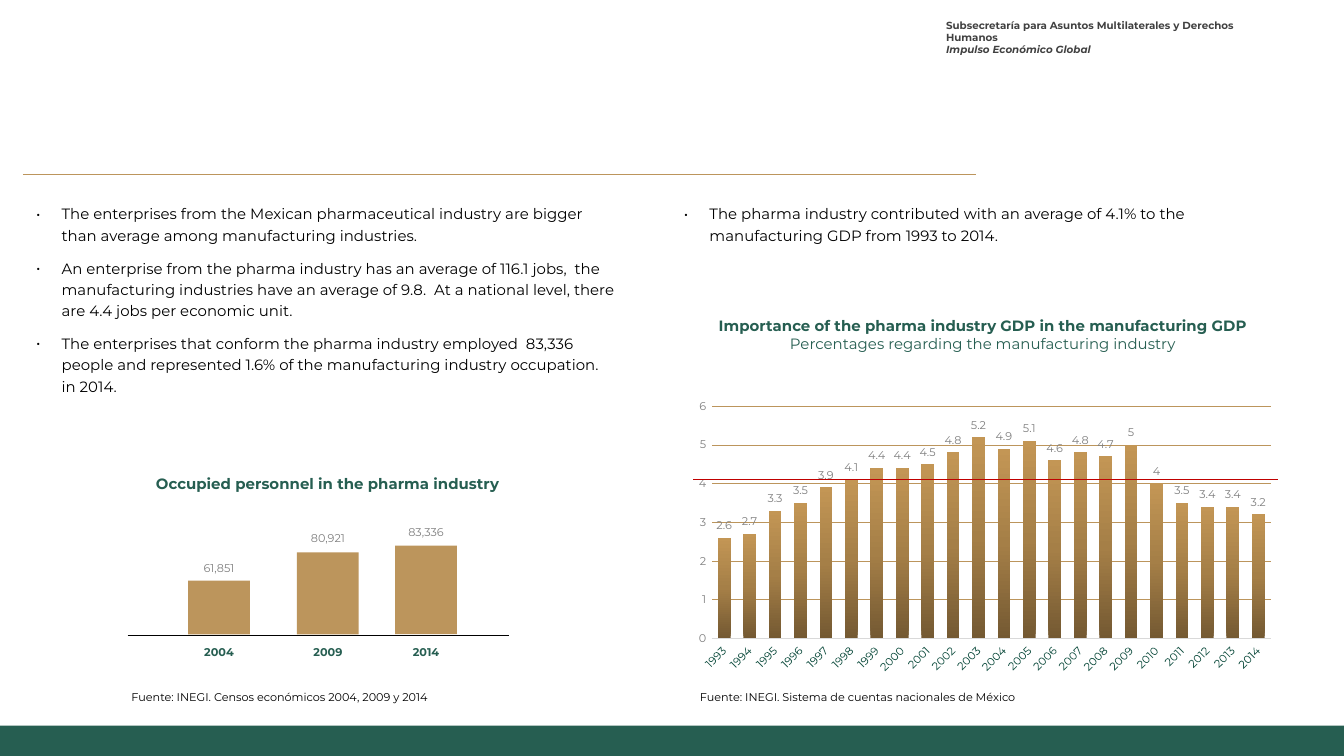
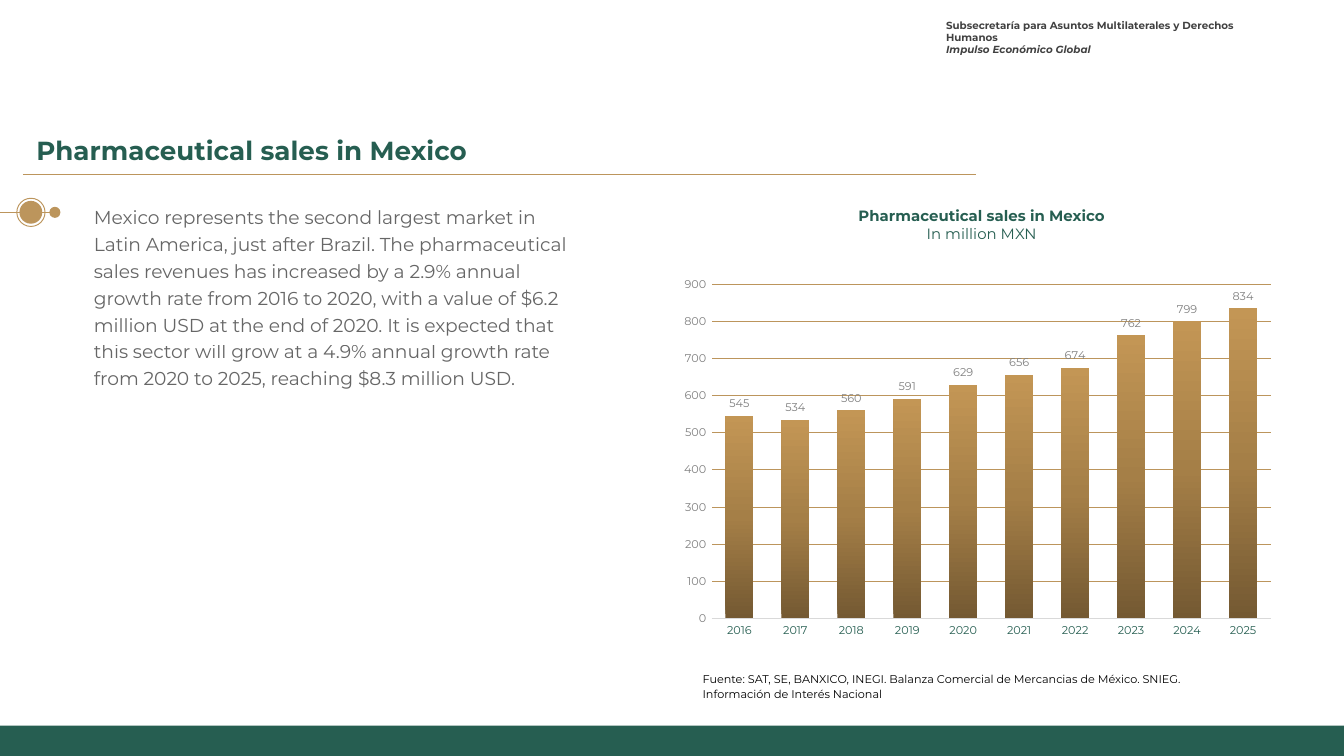
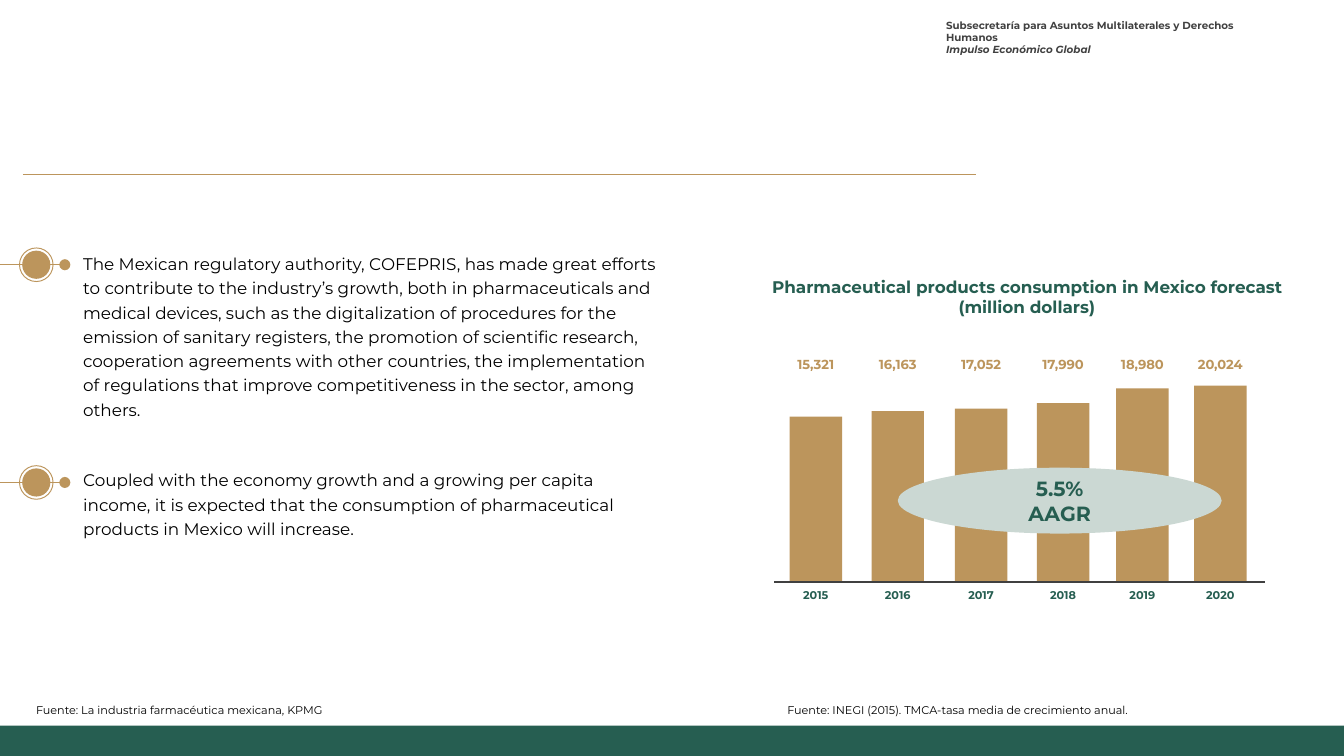
from copy import deepcopy

from lxml.etree import SubElement
from pptx import Presentation
from pptx.chart.data import CategoryChartData
from pptx.dml.color import RGBColor
from pptx.enum.chart import XL_CHART_TYPE as ChartType
from pptx.enum.chart import XL_LABEL_POSITION as LabelPosition
from pptx.enum.chart import XL_TICK_MARK as TickMark
from pptx.enum.shapes import MSO_CONNECTOR as Connector
from pptx.enum.shapes import MSO_SHAPE as Shape
from pptx.enum.text import MSO_ANCHOR as Anchor
from pptx.enum.text import MSO_AUTO_SIZE as AutoSize
from pptx.enum.text import PP_ALIGN as Align
from pptx.oxml.ns import qn
from pptx.util import Inches, Pt

COLORS = {
    "green": "265E51", "gold": "BC955C", "black": "000000", "dark": "404040",
    "gray": "808080", "axis": "D9D9D9", "red": "C00000", "pale": "CBD8D3",
    "bar_low": "745932", "bar_mid": "A57F47", "bar_high": "C39655",
}
FONT = "Montserrat"
TITLE_ONLY, BLANK = 5, 6
PAGE_WIDTH = 10
PAGE_HEIGHT = PAGE_WIDTH * 9 / 16

HEADING = {"size": 8, "color": "green", "bold": True}
YEAR = {"size": 6, "color": "green", "bold": True}
BODY = {"line_spacing": 1.2, "space_after": Pt(6)}
CENTER = {"alignment": Align.CENTER}
NOTE = {"line_spacing": 1.07, "space_after": Pt(8)}
TIGHT = {f"margin_{side}": 0 for side in ("left", "top", "right", "bottom")}


def rgb(name):
    return RGBColor.from_string(COLORS[name])


def inches(values):
    return [Inches(value) for value in values]


def set_all(target, values):
    for name, value in values.items():
        setattr(target, name, value)


def set_font(font, size, color, **values):
    set_all(font, {"name": FONT, "size": Pt(size), **values})
    font.color.rgb = rgb(color)


def add_bullet(para):
    props = para._p.get_or_add_pPr()
    props.set("marL", str(Inches(0.19)))
    props.set("indent", str(-Inches(0.19)))
    color = SubElement(props, qn("a:buClr"))
    SubElement(color, qn("a:srgbClr"), val=COLORS["black"])
    SubElement(props, qn("a:buFont"), typeface=FONT)
    SubElement(props, qn("a:buChar"), char="•")


def write(frame, paras, font, layout=None, bullets=False):
    """Fill a text frame; a paragraph is a string or a list of (text, font changes)."""
    for index, spans in enumerate(paras):
        para = frame.add_paragraph() if index else frame.paragraphs[0]
        if bullets:
            add_bullet(para)
        set_all(para, layout or {})
        for text, changes in [(spans, {})] if isinstance(spans, str) else spans:
            span = para.add_run()
            span.text = text
            set_font(span.font, **{**font, **changes})


def add_text(shapes, at, paras, font, layout=None, bullets=False, frame_format=None):
    frame = shapes.add_textbox(*inches(at)).text_frame
    set_all(frame, {"word_wrap": True, "auto_size": AutoSize.SHAPE_TO_FIT_TEXT,
                    **(frame_format or {})})
    write(frame, paras, font, layout, bullets)
    return frame


def add_label(shapes, center, top, text, font):
    add_text(shapes, (center - 0.2, top, 0.4, 0.1), [text], font, CENTER, frame_format=TIGHT)


def add_note(shapes, at, text, alignment=Align.JUSTIFY):
    add_text(shapes, at, [text], {"size": 6, "color": "black"},
             {**NOTE, "alignment": alignment})


def add_block(shapes, kind, at, fill=None, line=None):
    block = shapes.add_shape(kind, *inches(at))
    block.shadow.inherit = False
    if fill:
        block.fill.solid()
        block.fill.fore_color.rgb = rgb(fill)
    else:
        block.fill.background()
    if line:
        block.line.color.rgb = rgb(line)
        block.line.width = Pt(0.5)
    else:
        block.line.fill.background()
    return block


def add_line(shapes, start, end, color, width=0.75, oval_head=False):
    line = shapes.add_connector(Connector.STRAIGHT, *inches(start + end))
    line.line.color.rgb = rgb(color)
    line.line.width = Pt(width)
    if oval_head:
        SubElement(line.line._get_or_add_ln(), qn("a:headEnd"), type="oval")
    SubElement(line.element.spPr, qn("a:effectLst"))


def add_marker(slide, x, y, ring):
    shapes = slide.shapes.add_group_shape().shapes
    for size, colors in ((ring - 0.04, {"fill": "gold"}), (ring, {"line": "gold"})):
        add_block(shapes, Shape.OVAL, (x - size / 2, y - size / 2, size, size), **colors)
    add_line(shapes, (x + ring * 0.85, y), (0, y), "gold", 0.5, oval_head=True)


def add_bars(shapes, bars, width, base):
    for center, height in bars:
        add_block(shapes, Shape.RECTANGLE,
                  (center - width / 2, base - height, width, height), "gold")


def set_plot_area(chart, **fractions):
    area = next(chart.element.iter(qn("c:plotArea")))
    for old in area.findall(qn("c:layout")):
        area.remove(old)
    layout = SubElement(area, qn("c:layout"))
    area.insert(0, layout)
    manual = SubElement(layout, qn("c:manualLayout"))
    values = {"layoutTarget": "inner", "xMode": "edge", "yMode": "edge", **fractions}
    for name, value in values.items():
        SubElement(manual, qn(f"c:{name}"), val=str(value))


def add_column_chart(shapes, at, first_year, values, top, step, slanted=False):
    data = CategoryChartData()
    data.categories = [str(first_year + index) for index in range(len(values))]
    data.add_series("Series 1", values)
    chart = shapes.add_chart(ChartType.COLUMN_CLUSTERED, *inches(at), data).chart
    set_all(chart, {"has_title": False, "has_legend": False})
    set_font(chart.font, 6, "black")
    set_plot_area(chart, x=0.054, y=0.017, w=0.921, h=0.806)

    plot = chart.plots[0]
    set_all(plot, {"gap_width": 100, "overlap": -24, "vary_by_categories": False,
                   "has_data_labels": True})
    set_all(plot.data_labels, {"show_value": True, "position": LabelPosition.OUTSIDE_END})
    set_font(plot.data_labels.font, 6, "gray")

    fill = plot.series[0].format.fill
    fill.gradient()
    fill.gradient_angle = 90
    stops = next(chart.element.iter(qn("a:gsLst")))
    stops.append(deepcopy(stops[0]))
    names = ("bar_low", "bar_mid", "bar_high")
    for index, (stop, name) in enumerate(zip(fill.gradient_stops, names)):
        stop.position = index / 2
        stop.color.rgb = rgb(name)

    for axis, color in ((chart.category_axis, "green"), (chart.value_axis, "gray")):
        set_all(axis, {"major_tick_mark": TickMark.NONE, "minor_tick_mark": TickMark.NONE})
        set_font(axis.tick_labels.font, 6, color)
    chart.category_axis.format.line.color.rgb = rgb("axis")
    chart.category_axis.format.line.width = Pt(0.75)
    set_all(chart.value_axis, {"minimum_scale": 0, "maximum_scale": top, "major_unit": step})
    chart.value_axis.format.line.fill.background()
    grid = chart.value_axis.major_gridlines.format.line
    grid.color.rgb = rgb("gold")
    grid.width = Pt(0.25)
    if slanted:
        axis = next(chart.element.iter(qn("c:catAx")))
        next(axis.iter(qn("a:bodyPr"))).set("rot", "-2700000")


def add_page(deck, layout=BLANK):
    page = deck.slides.add_slide(deck.slide_layouts[layout])
    margins = {name: Inches(0.06) for name in TIGHT}
    add_text(page.shapes, (6.98, 0.08, 2.6, 0.35),
             ["Subsecretaría para Asuntos Multilaterales y Derechos Humanos",
              [("Impulso Económico Global", {"italic": True})]],
             {"size": 5.5, "color": "dark", "bold": True},
             frame_format={**margins, "auto_size": AutoSize.NONE})
    add_block(page.shapes, Shape.RECTANGLE, (0, 5.4, PAGE_WIDTH, PAGE_HEIGHT - 5.4), "green")
    add_line(page.shapes, (0.17, 1.3), (7.26, 1.3), "gold")
    return page


def set_title(page, text):
    title = page.shapes.title
    set_all(title, dict(zip(("left", "top", "width", "height"),
                            inches((0.17, 0.95, 4.83, 0.34)))))
    frame = title.text_frame
    set_all(frame, {"word_wrap": True, "vertical_anchor": Anchor.TOP,
                    "auto_size": AutoSize.SHAPE_TO_FIT_TEXT})
    write(frame, [text], {**HEADING, "size": 14}, {"alignment": Align.LEFT})


def build_industry(deck):
    shapes = add_page(deck).shapes
    body = {"size": 8, "color": "black"}
    add_text(shapes, (0.17, 1.45, 4.52, 1.55), [
        "The enterprises from the Mexican pharmaceutical industry are bigger than average "
        "among manufacturing industries.",
        "An enterprise from the pharma industry has an average of 116.1 jobs,  the "
        "manufacturing industries have an average of 9.8.  At a national level, there are "
        "4.4 jobs per economic unit.",
        "The enterprises that conform the pharma industry employed  83,336 people and "
        "represented 1.6% of the manufacturing industry occupation. in 2014.",
    ], body, BODY, bullets=True)
    add_text(shapes, (4.99, 1.45, 4.52, 0.41), [
        "The pharma industry contributed with an average of 4.1% to the manufacturing GDP "
        "from 1993 to 2014.",
    ], body, BODY, bullets=True)

    add_text(shapes, (0.56, 3.48, 3.76, 0.24),
             ["Occupied personnel in the pharma industry"], HEADING, CENTER)
    personnel = [("2004", "61,851", 1.63, 0.4, 4.18), ("2009", "80,921", 2.44, 0.61, 3.95),
                 ("2014", "83,336", 3.17, 0.66, 3.91)]
    add_line(shapes, (0.95, 4.73), (3.79, 4.73), "black")
    add_bars(shapes, [(center, height) for _, _, center, height, _ in personnel], 0.46, 4.72)
    for year, people, center, _, top in personnel:
        add_label(shapes, center, 4.8, year, YEAR)
        add_label(shapes, center, top, people, {"size": 6, "color": "gray"})
    add_note(shapes, (0.88, 5.08, 2.48, 0.2),
             "Fuente: INEGI. Censos económicos 2004, 2009 y 2014")

    add_text(shapes, (5.12, 2.31, 4.39, 0.37), [[
        ("Importance of the pharma industry GDP in the manufacturing GDP ", {}),
        ("Percentages regarding the manufacturing industry", {"bold": False}),
    ]], HEADING, CENTER)
    add_column_chart(shapes, (5.05, 2.97, 4.52, 2.16), 1993,
                     (2.6, 2.7, 3.3, 3.5, 3.9, 4.1, 4.4, 4.4, 4.5, 4.8, 5.2,
                      4.9, 5.1, 4.6, 4.8, 4.7, 5, 4, 3.5, 3.4, 3.4, 3.2),
                     top=6, step=1, slanted=True)
    add_line(shapes, (5.16, 3.57), (9.51, 3.57), "red")
    add_note(shapes, (5.11, 5.08, 2.67, 0.2),
             "Fuente: INEGI. Sistema de cuentas nacionales de México")


def build_sales(deck):
    page = add_page(deck, TITLE_ONLY)
    shapes = page.shapes
    set_title(page, "Pharmaceutical sales in Mexico")
    frame = add_text(shapes, (0.6, 1.45, 3.81, 1.5), [
        "Mexico represents the second largest market in Latin America, just after Brazil. "
        "The pharmaceutical sales revenues has increased by a 2.9% annual growth rate from "
        "2016 to 2020, with a value of $6.2 million USD at the end of 2020. It is expected "
        "that this sector will grow at a 4.9% annual growth rate from 2020 to 2025, "
        "reaching $8.3 million USD.",
    ], {"size": 10, "color": "black"}, BODY)
    for color in frame._txBody.iter(qn("a:srgbClr")):
        SubElement(color, qn("a:alpha"), val="60000")
    add_marker(page, 0.23, 1.58, 0.21)

    add_text(shapes, (5.37, 1.49, 3.87, 0.37),
             ["Pharmaceutical sales in Mexico", [("In million MXN", {"bold": False})]],
             HEADING, CENTER)
    add_column_chart(shapes, (5.05, 2.06, 4.52, 3.09), 2016,
                     (545, 534, 560, 591, 629, 656, 674, 762, 799, 834), top=900, step=100)
    add_note(shapes, (5.13, 4.95, 4.04, 0.31),
             "Fuente: SAT, SE, BANXICO, INEGI. Balanza Comercial de Mercancias de México. "
             "SNIEG. Información de Interés Nacional", Align.LEFT)


def build_forecast(deck):
    page = add_page(deck)
    shapes = page.shapes
    frame = add_text(shapes, (0.52, 1.81, 4.48, 2.25), [
        "The Mexican regulatory authority, COFEPRIS, has made great efforts to contribute to "
        "the industry’s growth, both in pharmaceuticals and medical devices, such as the "
        "digitalization of procedures for the emission of sanitary registers, the promotion "
        "of scientific research, cooperation agreements with other countries, the "
        "implementation of regulations that improve competitiveness in the sector, among "
        "others.",
        "Coupled with the economy growth and a growing per capita income, it is expected "
        "that the consumption of pharmaceutical products in Mexico will increase.",
    ], {"size": 9, "color": "black"}, BODY)
    frame.paragraphs[1].space_before = Pt(19)
    for y in (1.97, 3.59):
        add_marker(page, 0.27, y, 0.25)

    add_text(shapes, (5.55, 2.01, 4.18, 0.4),
             ["Pharmaceutical products consumption in Mexico forecast (million dollars)"],
             {**HEADING, "size": 9}, CENTER)
    forecast = [("2015", "15,321", 6.07, 1.23), ("2016", "16,163", 6.68, 1.27),
                ("2017", "17,052", 7.3, 1.29), ("2018", "17,990", 7.91, 1.33),
                ("2019", "18,980", 8.5, 1.44), ("2020", "20,024", 9.08, 1.46)]
    add_bars(shapes, [(center, height) for _, _, center, height in forecast], 0.39, 4.33)
    add_line(shapes, (5.76, 4.33), (9.41, 4.33), "dark")
    for year, dollars, center, _ in forecast:
        add_label(shapes, center, 4.38, year, YEAR)
        add_label(shapes, center, 2.65, dollars, {"size": 7, "color": "gold", "bold": True})
    growth = add_block(shapes, Shape.OVAL, (6.68, 3.48, 2.41, 0.49), "pale")
    growth.text_frame.vertical_anchor = Anchor.MIDDLE
    write(growth.text_frame, ["5.5%", "AAGR"], {**HEADING, "size": 11}, CENTER)

    add_note(shapes, (0.17, 5.18, 3.94, 0.2),
             "Fuente: La industria farmacéutica mexicana, KPMG")
    add_note(shapes, (5.76, 5.18, 3.94, 0.2),
             "Fuente: INEGI (2015). TMCA-tasa media de crecimiento anual.")


def main():
    deck = Presentation()
    deck.slide_width, deck.slide_height = inches((PAGE_WIDTH, PAGE_HEIGHT))
    for build in (build_industry, build_sales, build_forecast):
        build(deck)
    deck.save("out.pptx")


if __name__ == "__main__":
    main()
